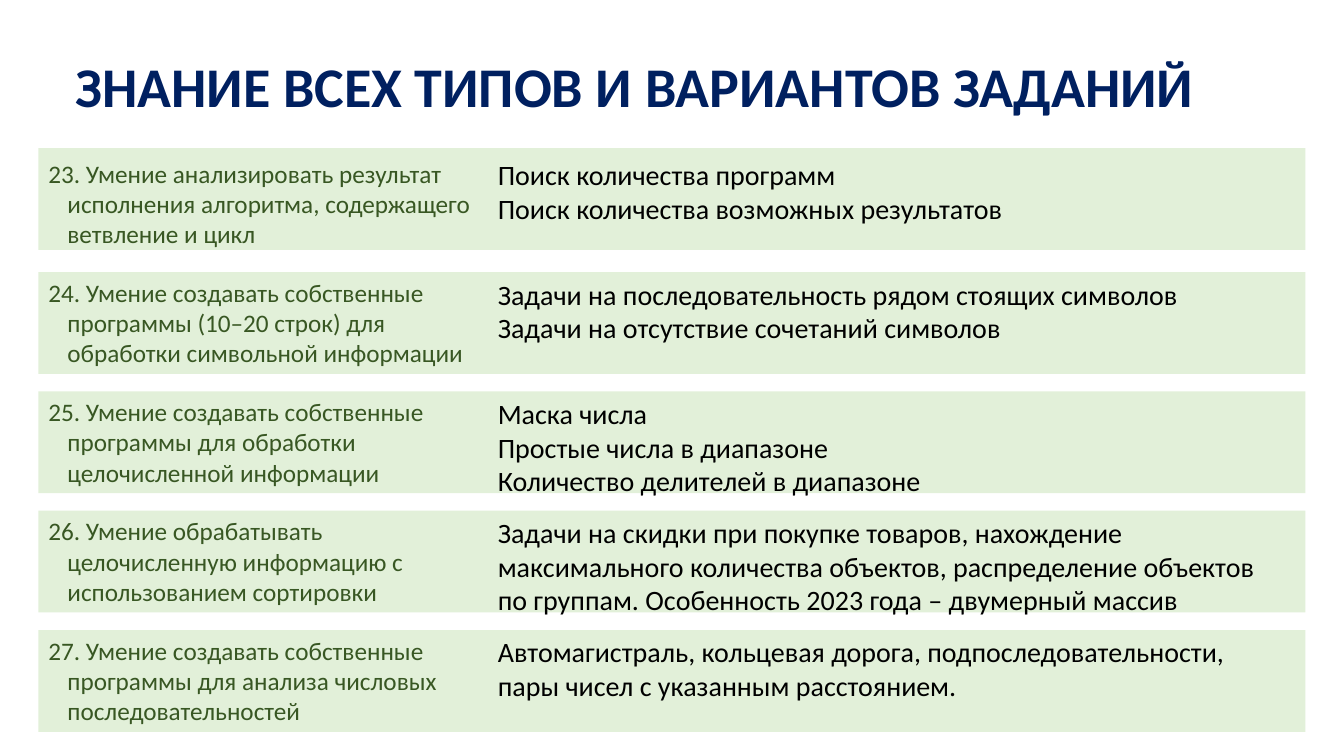
from pptx import Presentation
from pptx.dml.color import RGBColor
from pptx.enum.shapes import MSO_SHAPE as Shape
from pptx.enum.text import MSO_AUTO_SIZE as AutoSize
from pptx.util import Pt

COLORS = {"title": "002060", "band": "E2F0D9", "skill": "385723", "topic": "000000"}
FONT = "Calibri"

BAND_LEFT, BAND_WIDTH, BAND_HEIGHT = 27.4, 905, 72.7
FIRST_TOP, ROW_PITCH = 109.2, 85.2
FIRST_BAND_RISE = 3.4
SKILL_WIDTH = 321.1
HANGING_INDENT = 13.7

# skill, topics, width and height of the topics column
TASKS = [
    ("23. Умение анализировать результат исполнения алгоритма, содержащего ветвление и цикл",
     ["Поиск количества программ", "Поиск количества возможных результатов"],
     583.2, 55.4),
    ("24. Умение создавать собственные программы (10–20 строк) для обработки символьной информации",
     ["Задачи на последовательность рядом стоящих символов",
      "Задачи на отсутствие сочетаний символов"],
     589.7, 55.4),
    ("25. Умение создавать собственные программы для обработки целочисленной информации",
     ["Маска числа", "Простые числа в диапазоне", "Количество делителей в диапазоне"],
     537.8, 79.9),
    ("26. Умение обрабатывать целочисленную информацию с использованием сортировки",
     ["Задачи на скидки при покупке товаров, нахождение максимального количества объектов, "
      "распределение объектов по группам. Особенность 2023 года – двумерный массив"],
     568.1, 104.4),
    ("27. Умение создавать собственные программы для анализа числовых последовательностей",
     ["Автомагистраль, кольцевая дорога, подпоследовательности, "
      "пары чисел с указанным расстоянием."],
     568.1, 79.9),
]


def add_text(slide, box, lines, size, color, bold=False, hanging=0):
    """Place one paragraph per line in box, given as left, top, width, height."""
    frame = slide.shapes.add_textbox(*map(Pt, box)).text_frame
    frame.word_wrap = True
    frame.auto_size = AutoSize.SHAPE_TO_FIT_TEXT
    for number, line in enumerate(lines):
        paragraph = frame.add_paragraph() if number else frame.paragraphs[0]
        if hanging:
            properties = paragraph._p.get_or_add_pPr()
            properties.set("marL", str(Pt(hanging)))
            properties.set("indent", str(-Pt(hanging)))
        run = paragraph.add_run()
        run.text = line
        run.font.name = FONT
        run.font.size = Pt(size)
        run.font.bold = bold
        run.font.color.rgb = RGBColor.from_string(COLORS[color])


def add_title(slide, box):
    add_text(slide, box, ["ЗНАНИЕ ВСЕХ ТИПОВ И ВАРИАНТОВ ЗАДАНИЙ"], 40, "title", bold=True)


def add_band(slide, box):
    band = slide.shapes.add_shape(Shape.RECTANGLE, *map(Pt, box))
    band.shadow.inherit = False
    band.fill.solid()
    band.fill.fore_color.rgb = RGBColor.from_string(COLORS["band"])
    band.line.fill.background()


def add_task(slide, box, task, band_rise):
    """Draw a band, raised by band_rise, with the skill and its topics side by side."""
    left, top, width, height = box
    skill, topics, topics_width, topics_height = task
    add_band(slide, (left, top - band_rise, width, height))
    add_text(slide, (left, top, SKILL_WIDTH, height), [skill], 18, "skill",
             hanging=HANGING_INDENT)
    add_text(slide, (left + SKILL_WIDTH, top, topics_width, topics_height),
             topics, 20, "topic")


def main():
    deck = Presentation()
    deck.slide_width, deck.slide_height = Pt(960), Pt(540)
    slide = deck.slides.add_slide(deck.slide_layouts[6])
    add_title(slide, (46.8, 33.1, 851, 55.4))
    for row, task in enumerate(TASKS):
        box = (BAND_LEFT, FIRST_TOP + row * ROW_PITCH, BAND_WIDTH, BAND_HEIGHT)
        add_task(slide, box, task, 0 if row else FIRST_BAND_RISE)
    deck.save("out.pptx")


if __name__ == "__main__":
    main()
